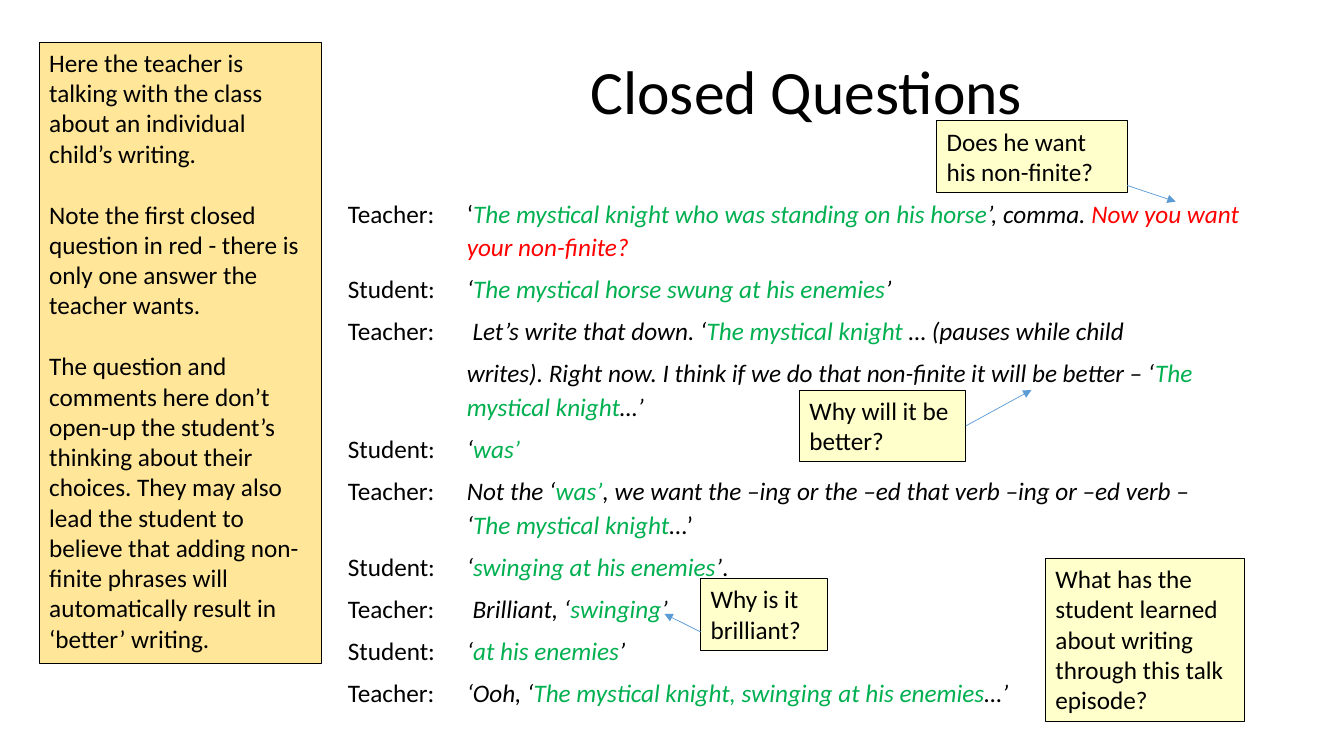
from dataclasses import dataclass

from lxml import etree
from pptx import Presentation
from pptx import util as u
from pptx.dml.color import RGBColor
from pptx.enum import shapes, text
from pptx.oxml.ns import qn

PX = 9144  # EMU in one px: 100 px to the inch


@dataclass(frozen=True)
class Theme:
    font: str = "Calibri"
    title_size: int = 44
    text_size: int = 18
    ink: str = "000000"
    quote: str = "00B050"
    question: str = "FF0000"
    callout: str = "FFFFCC"
    commentary: str = "FFE699"
    arrow: str = "5B9BD5"


THEME = Theme()

# Span styles: colour, italic
PLAIN = (THEME.ink, False)
SPOKEN = (THEME.ink, True)
QUOTED = (THEME.quote, True)
CLOSED = (THEME.question, True)

# One entry per paragraph of the talk
DIALOGUE = [
    [(PLAIN, "Teacher: \t‘"), (QUOTED, "The mystical knight who was standing on his horse"),
     (SPOKEN, "’, comma. "), (CLOSED, "Now you want your non-finite?")],
    [(PLAIN, "Student: \t"), (SPOKEN, "‘"),
     (QUOTED, "The mystical horse swung at his enemies"), (SPOKEN, "’")],
    [(PLAIN, "Teacher:\t "), (SPOKEN, "Let’s write that down. ‘"),
     (QUOTED, "The mystical knight "), (SPOKEN, "… (pauses while child")],
    [(SPOKEN, "\twrites). Right now. I think if we do that non-finite it will be better – ‘"),
     (QUOTED, "The mystical knight"), (SPOKEN, "…’")],
    [(PLAIN, "Student: \t"), (SPOKEN, "‘"), (QUOTED, "was’")],
    [(PLAIN, "Teacher: \t"), (SPOKEN, "Not the ‘"), (QUOTED, "was’"),
     (SPOKEN, ", we want the –ing or the –ed that verb –ing or –ed verb –\n‘"),
     (QUOTED, "The mystical knight"), (PLAIN, "…’")],
    [(PLAIN, "Student:\t"), (SPOKEN, "‘"), (QUOTED, "swinging at his enemies"),
     (SPOKEN, "’"), (PLAIN, ".")],
    [(PLAIN, "Teacher:\t "), (SPOKEN, "Brilliant, ‘"), (QUOTED, "swinging"), (SPOKEN, "’")],
    [(PLAIN, "Student:\t"), (SPOKEN, "‘"), (QUOTED, "at his enemies"), (SPOKEN, "’")],
    [(PLAIN, "Teacher:\t"), (SPOKEN, "‘Ooh, ‘"),
     (QUOTED, "The mystical knight, swinging at his enemies"), (SPOKEN, "…’")],
]

COMMENTARY = [
    "Here the teacher is talking with the class about an individual child’s writing.",
    "Note the first closed question in red - there is only one answer the teacher wants.",
    "The question and comments here don’t open-up the student’s thinking about their choices. "
    "They may also lead the student to believe that adding non-finite phrases will "
    "automatically result in ‘better’ writing.",
]


def place(shape, left, top, width, height):
    shape.left, shape.top = left * PX, top * PX
    shape.width, shape.height = width * PX, height * PX


def format_span(span, size, style=PLAIN):
    colour, italic = style
    span.font.name = THEME.font
    span.font.size = u.Pt(size)
    span.font.italic = italic
    span.font.color.rgb = RGBColor.from_string(colour)


def fill_title(title, wording):
    place(title, 350, 19, 900, 150)
    title.text_frame.text = wording
    para = title.text_frame.paragraphs[0]
    para.alignment = text.PP_ALIGN.CENTER
    para.line_spacing = 0.9
    format_span(para.runs[0], THEME.title_size)


def fill_dialogue(body, dialogue):
    place(body, 335, 188, 915, 528)
    frame = body.text_frame
    frame.auto_size = text.MSO_AUTO_SIZE.NONE
    for index, spans in enumerate(dialogue):
        para = frame.add_paragraph() if index else frame.paragraphs[0]
        para.line_spacing = u.Pt(24)
        para.space_before, para.space_after = u.Pt(0), u.Pt(6)
        # Hanging indent without a bullet: the tab leads to the indent
        props = para._p.get_or_add_pPr()
        props.set("marL", str(118 * PX))
        props.set("indent", str(-118 * PX))
        etree.SubElement(props, qn("a:buNone"))
        for style, wording in spans:
            for row, part in enumerate(wording.split("\n")):
                if row:
                    para.add_line_break()
                span = para.add_run()
                span.text = part
                format_span(span, THEME.text_size, style)


def add_note(page, bounds, paragraphs, fill):
    box = page.shapes.add_shape(shapes.MSO_SHAPE.RECTANGLE, *(n * PX for n in bounds))
    box.shadow.inherit = False
    box.fill.solid()
    box.fill.fore_color.rgb = RGBColor.from_string(fill)
    box.line.color.rgb = RGBColor.from_string(THEME.ink)
    box.line.width = u.Pt(0.75)
    frame = box.text_frame
    frame.word_wrap = True
    frame.vertical_anchor = text.MSO_ANCHOR.TOP
    frame.text = "\n".join(paragraphs)
    for index, para in enumerate(frame.paragraphs):
        para.alignment = text.PP_ALIGN.LEFT
        para.space_before = u.Pt(22 if index else 0)
        format_span(para.runs[0], THEME.text_size)
    return box


def add_arrow(page, start, end):
    arrow = page.shapes.add_connector(
        shapes.MSO_CONNECTOR.STRAIGHT, *(n * PX for n in start + end))
    arrow.line.color.rgb = RGBColor.from_string(THEME.arrow)
    arrow.line.width = u.Pt(0.5)
    etree.SubElement(arrow.line._get_or_add_ln(), qn("a:tailEnd"), type="triangle")
    etree.SubElement(arrow._element.spPr, qn("a:effectLst"))
    return arrow


def main():
    deck = Presentation()
    deck.slide_width, deck.slide_height = u.Inches(13.33), u.Inches(7.5)
    page = deck.slides.add_slide(deck.slide_layouts[1])

    # Title and talk
    fill_title(page.shapes.title, "Closed Questions")
    fill_dialogue(page.placeholders[1], DIALOGUE)

    # Callouts and commentary
    add_note(page, (929, 120, 189, 71), ["Does he want his non-finite?"], THEME.callout)
    better = add_note(page, (793, 387, 165, 71), ["Why will it be better?"], THEME.callout)
    add_note(page, (695, 574, 126, 71), ["Why is it brilliant?"], THEME.callout)
    add_note(page, (1037, 554, 197, 162),
             ["What has the student learned about writing through this talk episode?"],
             THEME.callout)
    add_note(page, (39, 42, 280, 616), COMMENTARY, THEME.commentary)

    # Arrows from the callouts to the words they question
    add_arrow(page, (958, 422), (1023, 387)).begin_connect(better, 3)
    add_arrow(page, (1118, 184), (1166, 200))
    add_arrow(page, (695, 627), (659, 609))

    deck.save("out.pptx")


if __name__ == "__main__":
    main()
